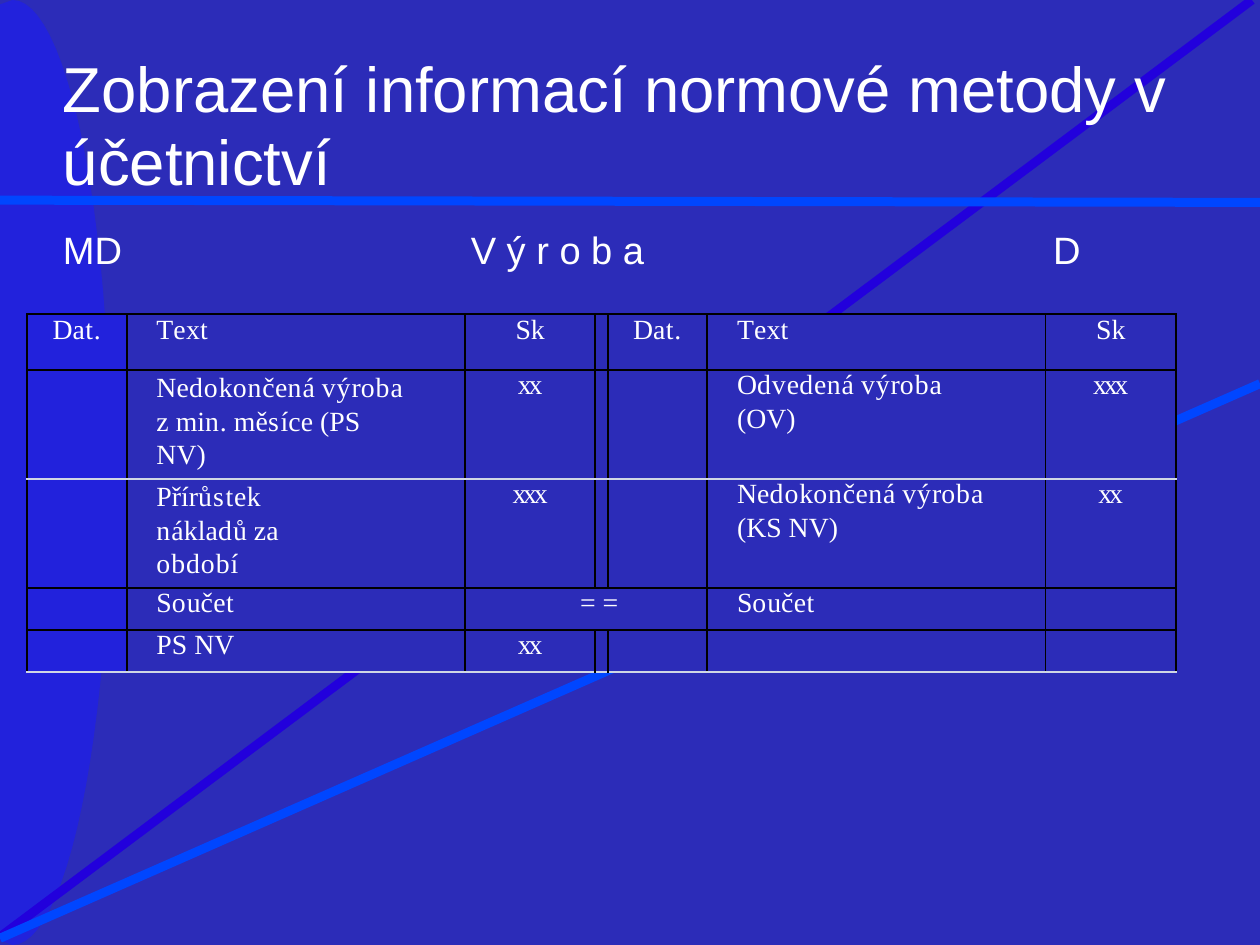
from itertools import groupby
from math import cos, pi, sin

from lxml.etree import SubElement as Sub
from pptx import Presentation
from pptx.dml.color import RGBColor as RGB
from pptx.enum.shapes import MSO_CONNECTOR as Conn
from pptx.enum.text import PP_ALIGN as Align
from pptx.oxml.ns import qn
from pptx.util import Cm, Pt

NAVY = RGB(0x2C, 0x2C, 0xB8)
BLUE = RGB(0x22, 0x22, 0xDC)
VIOLET = RGB(0x22, 0x00, 0xDC)
AZURE = RGB(0x00, 0x46, 0xFF)
WHITE = RGB(0xFF, 0xFF, 0xFF)
BLACK = RGB(0x00, 0x00, 0x00)
PALE = RGB(0xD0, 0xD7, 0xE5)

WIDE, HIGH = 28.02, 21.01

# Letter spacing in hundredths of a point, by letter
GAPS = {"donvýbů": 60, "aečáě": 20, "s": 110, "t": 50, "PS": -40,
        "r(ř": -50, "DNOK": -70, "k": -80, "iíl": -90, "z": -110,
        "m": -160, "V": -190, "x": -210}
SPACING = {letter: gap for group, gap in GAPS.items() for letter in group}

COLS = [2.21, 7.52, 2.9, 0.28, 2.21, 7.52, 2.9]
ROWS = [1.24, 1.91, 1.91, 0.94, 0.94]
CELLS = [
    ["Dat.", "Text", "Sk", "", "Dat.", "Text", "Sk"],
    ["", "Nedokončená výroba z min. měsíce (PS NV)", "xx", "",
     "", "Odvedená výroba\n(OV)", "xxx"],
    ["", "Přírůstek nákladů za období", "xxx", "",
     "", "Nedokončená výroba\n(KS NV)", "xx"],
    ["", "Součet", "= =", "", "", "Součet", ""],
    ["", "PS NV", "xx", "", "", "", ""],
]
INDENT = {0: 0.56, 1: 0.66, 4: 0.56, 5: 0.66}
INSET = {(1, 1): 1.28, (2, 1): 2.8}  # right margins of the wrapped cells


def set_font(para, name, size):
    para.font.name, para.font.size = name, Pt(size)
    para.font.color.rgb = WHITE


def add_line(slide, x1, y1, x2, y2, color):
    line = slide.shapes.add_connector(
        Conn.STRAIGHT, Cm(x1), Cm(y1), Cm(x2), Cm(y2))
    line.line.color.rgb = color
    line.line.width = Pt(5.67)
    Sub(line._element.spPr, qn("a:effectLst"))


def add_backdrop(slide, wide, high):
    slide.background.fill.solid()
    slide.background.fill.fore_color.rgb = NAVY

    # Half ellipse cut off by the left edge
    mid, rad, half, steps = 0.28, 2.18, high / 2, 48
    turns = [pi * i / steps - pi / 2 for i in range(steps + 1)]
    points = [(Cm(mid + rad * cos(t)), Cm(half + half * sin(t)))
              for t in turns]
    build = slide.shapes.build_freeform(0, Cm(0.1))
    build.add_line_segments(points + [(0, Cm(high - 0.1))], close=True)
    oval = build.convert_to_shape()
    oval.shadow.inherit = False
    oval.fill.solid()
    oval.fill.fore_color.rgb = BLUE
    oval.line.fill.background()

    # Rays and the rule below the title
    add_line(slide, wide - 0.18, 0, 0, high - 0.18, VIOLET)
    add_line(slide, wide, 4.5, 0, 4.45, AZURE)
    add_line(slide, wide, 8.53, 0, high - 0.15, AZURE)


def add_text(slide, x, y, w, h, text, size, lead, tabs=()):
    box = slide.shapes.add_textbox(Cm(x), Cm(y), Cm(w), Cm(h))
    frame = box.text_frame
    frame.word_wrap = True
    frame.margin_left = frame.margin_right = 0
    frame.margin_top = frame.margin_bottom = 0
    frame.text = text
    for para in frame.paragraphs:
        para.line_spacing = Pt(lead)
        set_font(para, "Arial", size)
        if tabs:
            props = para._p.get_or_add_pPr()
            stops = props.makeelement(qn("a:tabLst"), {})
            props.find(qn("a:defRPr")).addprevious(stops)
            for stop in tabs:
                Sub(stops, qn("a:tab"), pos=str(Cm(stop)), algn="l")


def add_runs(para, text):
    def gap(i):
        ends = i + 1 == len(text) or text[i + 1] == " "
        if ends and text[i] not in "xk":
            return 0
        return SPACING.get(text[i], 0)

    for space, group in groupby(range(len(text)), gap):
        run = para.add_run()
        run.text = "".join(text[i] for i in group)
        run._r.get_or_add_rPr().set("spc", str(space))


def set_borders(cell, row):
    props = cell._tc.get_or_add_tcPr()
    top = PALE if row == 2 else BLACK
    base = PALE if row in (1, 4) else BLACK
    for side, color in zip("LRTB", (BLACK, BLACK, top, base)):
        line = Sub(props, qn("a:ln" + side), w=str(Pt(1.44)))
        fill = Sub(line, qn("a:solidFill"))
        Sub(fill, qn("a:srgbClr"), val=str(color))


def fill_cell(cell, row, col, text):
    cell.margin_left = cell.margin_top = cell.margin_bottom = 0
    cell.margin_right = Cm(INSET.get((row, col), 0))
    set_borders(cell, row)
    cell.fill.solid()
    cell.fill.fore_color.rgb = NAVY if col else BLUE
    for i, part in enumerate(text.split("\n")):
        frame = cell.text_frame
        para = frame.add_paragraph() if i else frame.paragraphs[0]
        if i:
            para.space_before = Pt(1.9)
        if (row, col) in INSET:
            para.line_spacing = 1.09
        set_font(para, "Times New Roman", 17.5)
        if col in INDENT:
            para._p.get_or_add_pPr().set("marL", str(Cm(INDENT[col])))
        else:
            para.alignment = Align.CENTER
            if text == "= =":
                para._p.get_or_add_pPr().set("marL", str(Cm(0.58)))
        add_runs(para, part)


def add_ledger(slide, x, y):
    table = slide.shapes.add_table(
        len(ROWS), len(COLS), Cm(x), Cm(y),
        Cm(sum(COLS)), Cm(sum(ROWS))).table
    table.first_row = table.horz_banding = False
    for col, size in zip(table.columns, COLS):
        col.width = Cm(size)
    for row, size in zip(table.rows, ROWS):
        row.height = Cm(size)
    for r, texts in enumerate(CELLS):
        for c, text in enumerate(texts):
            fill_cell(table.cell(r, c), r, c, text)
    table.cell(3, 2).merge(table.cell(3, 4))


def main():
    deck = Presentation()
    deck.slide_width, deck.slide_height = Cm(WIDE), Cm(HIGH)
    slide = deck.slides.add_slide(deck.slide_layouts[6])
    add_backdrop(slide, WIDE, HIGH)
    # Title and account heading
    add_text(slide, 1.4, 1.17, 25.27, 3.28,
             "Zobrazení informací normové metody v\núčetnictví", 40, 46)
    add_text(slide, 1.4, 5.05, 22.68, 1.04,
             "MD\tV ý r o b a\tD", 24, 28.6, (9.07, 22.02))
    add_ledger(slide, 0.61, 6.99)
    deck.save("out.pptx")


if __name__ == "__main__":
    main()
